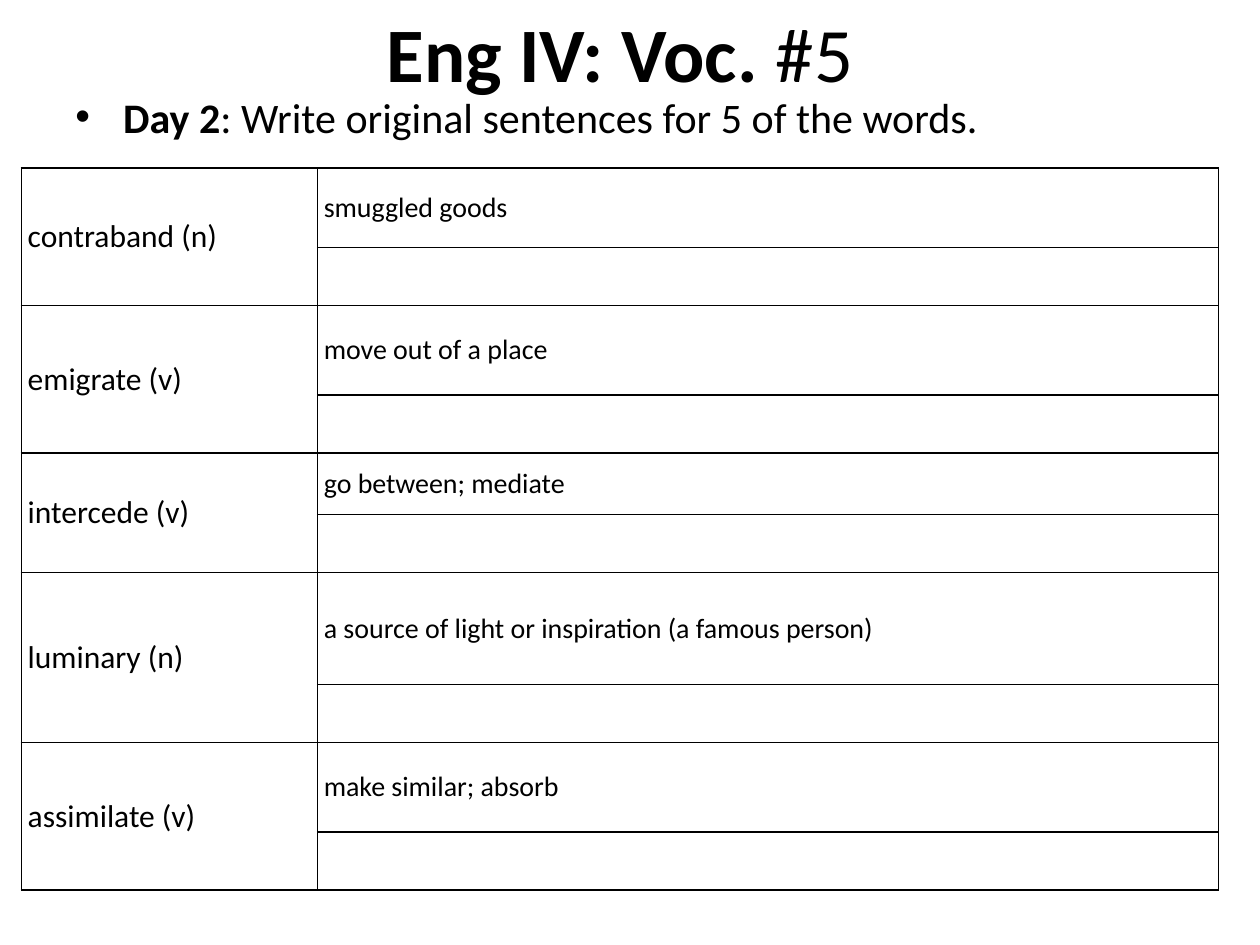
from dataclasses import dataclass

from lxml import etree
from pptx import Presentation, util as u
from pptx.dml.color import RGBColor
from pptx.enum import text
from pptx.oxml.ns import qn


@dataclass(frozen=True)
class Theme:
    font: str = "Calibri"
    ink: str = "000000"
    title: int = 44
    body: int = 24
    word: int = 18
    meaning: int = 16
    border: float = 1


@dataclass(frozen=True)
class Area:
    """Left, top, width and height as shares of the slide."""
    left: float
    top: float
    width: float
    height: float

    def lengths(self) -> list[int]:
        return [int(WIDTH * self.left), int(HEIGHT * self.top),
                int(WIDTH * self.width), int(HEIGHT * self.height)]


@dataclass(frozen=True)
class Entry:
    word: str
    meaning: str
    height: float


THEME = Theme()
WIDTH, HEIGHT = u.Inches(10), u.Inches(7.5)
TITLE = Area(0.042, 0, 0.9, 0.11)
TASK = Area(0.05, 0.09, 0.9, 0.067)
TABLE = Area(0.017, 0.178, 0.95, 0.767)
COLUMNS = (0.235, 0.715)
SENTENCE_HEIGHT = 0.46
ENTRIES = (
    Entry("contraband (n)", "smuggled goods", 0.63),
    Entry("emigrate (v)", "move out of a place", 0.71),
    Entry("intercede (v)", "go between; mediate", 0.49),
    Entry("luminary (n)", "a source of light or inspiration (a famous person)", 0.89),
    Entry("assimilate (v)", "make similar; absorb", 0.71),
)


def style(span, size: int, bold: bool = False) -> None:
    span.font.name = THEME.font
    span.font.size = u.Pt(size)
    span.font.bold = bold
    span.font.color.rgb = RGBColor.from_string(THEME.ink)


def add_heading(page, area: Area, strong: str, plain: str, size: int):
    """Add a text box whose line starts bold, and return its paragraph."""
    box = page.shapes.add_textbox(*area.lengths())
    box.text_frame.word_wrap = True
    box.text_frame.vertical_anchor = text.MSO_ANCHOR.TOP
    para = box.text_frame.paragraphs[0]
    for words, bold in ((strong, True), (plain, False)):
        span = para.add_run()
        span.text = words
        style(span, size, bold)
    return box, para


def add_bullet(para) -> None:
    properties = para._p.get_or_add_pPr()
    indent = u.Inches(0.38)
    properties.set("marL", str(indent))
    properties.set("indent", str(-indent))
    para.space_before = u.Pt(THEME.body * 0.2)
    etree.SubElement(properties, qn("a:buFont"), typeface="Arial")
    etree.SubElement(properties, qn("a:buChar"), char="•")


def format_cell(cell) -> None:
    cell.margin_left = cell.margin_right = u.Inches(0.05)
    cell.margin_top = cell.margin_bottom = 0
    cell.vertical_anchor = text.MSO_ANCHOR.MIDDLE
    properties = cell._tc.get_or_add_tcPr()
    for side in ("lnL", "lnR", "lnT", "lnB"):
        line = etree.SubElement(properties, qn(f"a:{side}"), w=str(u.Pt(THEME.border)))
        fill = etree.SubElement(line, qn("a:solidFill"))
        etree.SubElement(fill, qn("a:srgbClr"), val=THEME.ink)
    cell.fill.background()


def write_cell(cell, words: str, size: int) -> None:
    cell.text_frame.text = words
    style(cell.text_frame.paragraphs[0].runs[0], size)


def add_vocabulary(page) -> None:
    """Give each word one merged cell beside its meaning and a blank line."""
    frame = page.shapes.add_table(2 * len(ENTRIES), len(COLUMNS), *TABLE.lengths())
    table = frame.table
    table.first_row = table.horz_banding = False
    for column, share in zip(table.columns, COLUMNS):
        column.width = int(WIDTH * share)
    for cell in table.iter_cells():
        format_cell(cell)
    for index, entry in enumerate(ENTRIES):
        row = 2 * index
        table.rows[row].height = u.Inches(entry.height)
        table.rows[row + 1].height = u.Inches(SENTENCE_HEIGHT)
        table.cell(row, 0).merge(table.cell(row + 1, 0))
        write_cell(table.cell(row, 0), entry.word, THEME.word)
        write_cell(table.cell(row, 1), entry.meaning, THEME.meaning)


def main() -> None:
    deck = Presentation()
    deck.slide_width, deck.slide_height = WIDTH, HEIGHT
    page = deck.slides.add_slide(deck.slide_layouts[6])

    box, para = add_heading(page, TITLE, "Eng IV: Voc. ", "#5", THEME.title)
    box.text_frame.vertical_anchor = text.MSO_ANCHOR.MIDDLE
    para.alignment = text.PP_ALIGN.CENTER

    box, para = add_heading(page, TASK, "Day 2",
                            ": Write original sentences for 5 of the words.", THEME.body)
    add_bullet(para)

    add_vocabulary(page)
    deck.save("out.pptx")


if __name__ == "__main__":
    main()
